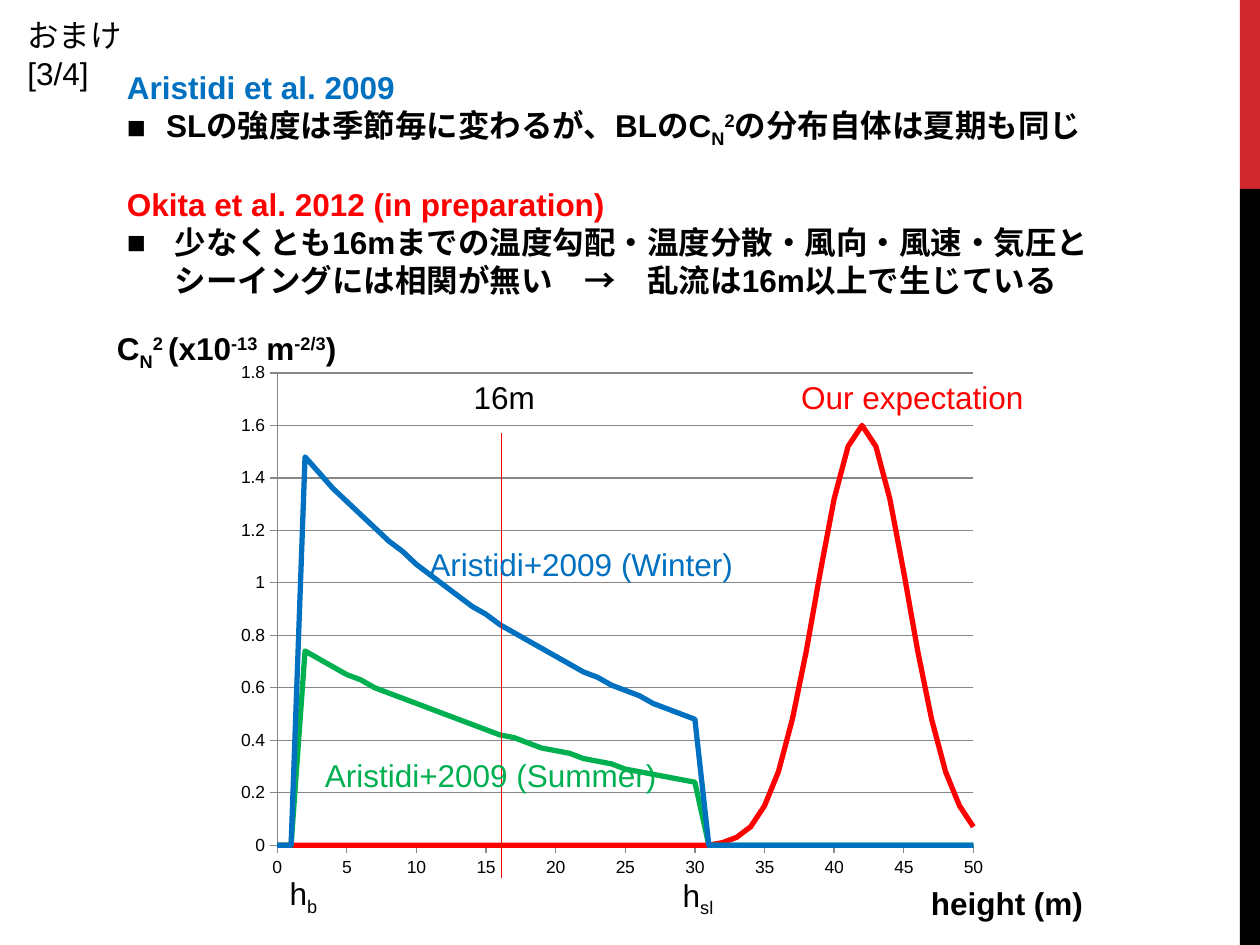
from math import exp

from lxml import etree
from pptx import Presentation
from pptx.chart.data import XyChartData
from pptx.dml.color import RGBColor
from pptx.enum.chart import XL_CHART_TYPE, XL_TICK_MARK
from pptx.enum.shapes import MSO_CONNECTOR, MSO_SHAPE
from pptx.enum.text import MSO_AUTO_SIZE
from pptx.oxml.ns import qn
from pptx.util import Inches, Pt

BLACK = RGBColor(0x00, 0x00, 0x00)
RED = RGBColor(0xFF, 0x00, 0x00)
BLUE = RGBColor(0x00, 0x70, 0xC0)
GREEN = RGBColor(0x00, 0xB0, 0x50)
CRIMSON = RGBColor(0xD1, 0x28, 0x2E)
GRAY = RGBColor(0x86, 0x86, 0x86)
SCATTER = XL_CHART_TYPE.XY_SCATTER_LINES_NO_MARKERS
OUTSIDE = XL_TICK_MARK.OUTSIDE
NO_TICK = XL_TICK_MARK.NONE
RECT = MSO_SHAPE.RECTANGLE
STRAIGHT = MSO_CONNECTOR.STRAIGHT
GROW = MSO_AUTO_SIZE.SHAPE_TO_FIT_TEXT
SUB, SUP = -25, 30
HEIGHTS = range(51)


class SlideBuilder:
    """Holds the text style and the current slide, and adds elements to it."""

    def __init__(self, s, font="Arial", size=18):
        self.s, self.font, self.size = s, font, size

    def bar(self, x, y, w, h, color):
        sp = self.s.shapes.add_shape(RECT, Inches(x), Inches(y), Inches(w), Inches(h))
        sp.shadow.inherit = False
        sp.fill.solid()
        sp.fill.fore_color.rgb = color
        sp.line.fill.background()

    def line(self, x1, y1, x2, y2, color):
        sp = self.s.shapes.add_connector(STRAIGHT, Inches(x1), Inches(y1), Inches(x2), Inches(y2))
        sp.line.color.rgb = color
        sp.line.width = Pt(1)
        etree.SubElement(sp._element.spPr, qn("a:effectLst"))

    def box(self, x, y, w, h=0.4, wrap=False):
        tf = self.s.shapes.add_textbox(Inches(x), Inches(y), Inches(w), Inches(h)).text_frame
        tf.word_wrap = wrap
        tf.auto_size = GROW
        return tf

    def runs(self, p, parts, color=BLACK, bold=False):
        for text, base in parts:
            r = p.add_run()
            r.text = text
            r.font.name, r.font.size, r.font.bold = self.font, Pt(self.size), bold
            r.font.color.rgb = color
            if base:
                r._r.get_or_add_rPr().set("baseline", str(base * 1000))

    def label(self, x, y, w, parts, color=BLACK, bold=False, wrap=False):
        self.runs(self.box(x, y, w, wrap=wrap).paragraphs[0], parts, color, bold)

    def bullet(self, p, indent):
        pPr = p._p.get_or_add_pPr()
        pPr.set("marL", str(Inches(indent)))
        pPr.set("indent", str(-Inches(indent)))
        etree.SubElement(pPr, qn("a:buFont")).set("typeface", self.font)
        etree.SubElement(pPr, qn("a:buChar")).set("char", "■")

    def findings(self, x, y, w, h, sections):
        tf = self.box(x, y, w, h, wrap=True)
        for i, (title, color, indent, parts) in enumerate(sections):
            p = tf.add_paragraph() if i else tf.paragraphs[0]
            if i:
                p.space_before = Pt(21)
            self.runs(p, [(title, 0)], color, True)
            p = tf.add_paragraph()
            self.bullet(p, indent)
            self.runs(p, parts, BLACK, True)

    def axis(self, axis, top, step):
        axis.minimum_scale, axis.maximum_scale, axis.major_unit = 0, top, step
        axis.major_tick_mark, axis.minor_tick_mark = OUTSIDE, NO_TICK
        axis.format.line.color.rgb = GRAY
        axis.tick_labels.number_format = "General"
        axis.tick_labels.number_format_is_linked = False

    def scatter(self, x, y, w, h, curves, plot):
        data = XyChartData()
        for name, curve, _ in curves:
            series = data.add_series(name)
            for height in HEIGHTS:
                series.add_data_point(height, round(curve(height), 2))
        chart = self.s.shapes.add_chart(
            SCATTER, Inches(x), Inches(y), Inches(w), Inches(h), data).chart
        chart.has_legend = chart.has_title = False
        chart.font.name, chart.font.size = self.font, Pt(10)
        chart.font.color.rgb = BLACK
        chart.plots[0].vary_by_categories = False
        for series, (_, _, color) in zip(chart.plots[0].series, curves):
            series.smooth = False
            series.format.line.color.rgb = color
            series.format.line.width = Pt(3)
        self.axis(chart.category_axis, 50, 5)
        self.axis(chart.value_axis, 1.8, 0.2)
        chart.category_axis.has_major_gridlines = False
        chart.value_axis.has_major_gridlines = True
        chart.value_axis.major_gridlines.format.line.color.rgb = GRAY
        self.plot_layout(chart, plot)

    def plot_layout(self, chart, plot):
        area = chart._chartSpace.find(".//" + qn("c:plotArea"))
        for old in area.findall(qn("c:layout")):
            area.remove(old)
        layout = etree.Element(qn("c:layout"))
        area.insert(0, layout)
        manual = etree.SubElement(layout, qn("c:manualLayout"))
        settings = [("layoutTarget", "inner"), ("xMode", "edge"), ("yMode", "edge")]
        for tag, val in settings + list(zip("xywh", plot)):
            etree.SubElement(manual, qn("c:" + tag)).set("val", str(val))


def surface_layer(strength):
    return lambda h: strength * exp(-h / 25) if 2 <= h <= 30 else 0


def expected_layer(h):
    return 1.6 * exp(-(h - 42) ** 2 / 20.8)


def main():
    prs = Presentation()
    prs.slide_width, prs.slide_height = Inches(10), Inches(7.5)
    b = SlideBuilder(prs.slides.add_slide(prs.slide_layouts[6]))

    b.bar(9.84, 0, 0.16, 1.5, CRIMSON)
    b.bar(9.84, 1.5, 0.16, 6, BLACK)
    b.label(0.83, 2.56, 2.2, [("C", 0), ("N", SUB), ("2 ", SUP), ("(x10", 0), ("-13", SUP),
                              (" m", 0), ("-2/3", SUP), (")", 0)], bold=True, wrap=True)
    b.scatter(1.77, 2.79, 6.14, 4.26, [
        ("Series 1", surface_layer(1.6), BLUE),
        ("Series 2", surface_layer(0.8), GREEN),
        ("Series 3", expected_layer, RED),
    ], plot=(0.07, 0.04, 0.9, 0.88))
    b.label(7.29, 6.97, 1.5, [("height (m)", 0)], bold=True, wrap=True)
    b.line(3.98, 6.97, 3.98, 3.44, RED)
    for x, y, w, text, color in [
        (3.66, 2.95, 0.69, "16m", BLACK),
        (3.31, 4.28, 2.64, "Aristidi+2009 (Winter)", BLUE),
        (2.48, 5.95, 2.86, "Aristidi+2009 (Summer)", GREEN),
        (6.26, 2.95, 1.98, "Our expectation", RED),
    ]:
        b.label(x, y, w, [(text, 0)], color)
    b.findings(0.91, 0.49, 8.27, 1.92, [
        ("Aristidi et al. 2009", BLUE, 0.31,
         [("SLの強度は季節毎に変わるが、BLのC", 0), ("N", SUB), ("2", SUP),
          ("の分布自体は夏期も同じ", 0)]),
        ("Okita et al. 2012 (in preparation)", RED, 0.38,
         [("少なくとも16mまでの温度勾配・温度分散・風向・風速・気圧とシーイングには"
           "相関が無い　→　乱流は16m以上で生じている", 0)]),
    ])
    b.label(5.32, 6.9, 0.46, [("h", 0), ("sl", SUB)])
    b.label(2.2, 6.89, 0.44, [("h", 0), ("b", SUB)])
    b.label(0.12, 0.08, 1.46, [("おまけ [3/4]", 0)], wrap=True)
    prs.save("out.pptx")


if __name__ == "__main__":
    main()
